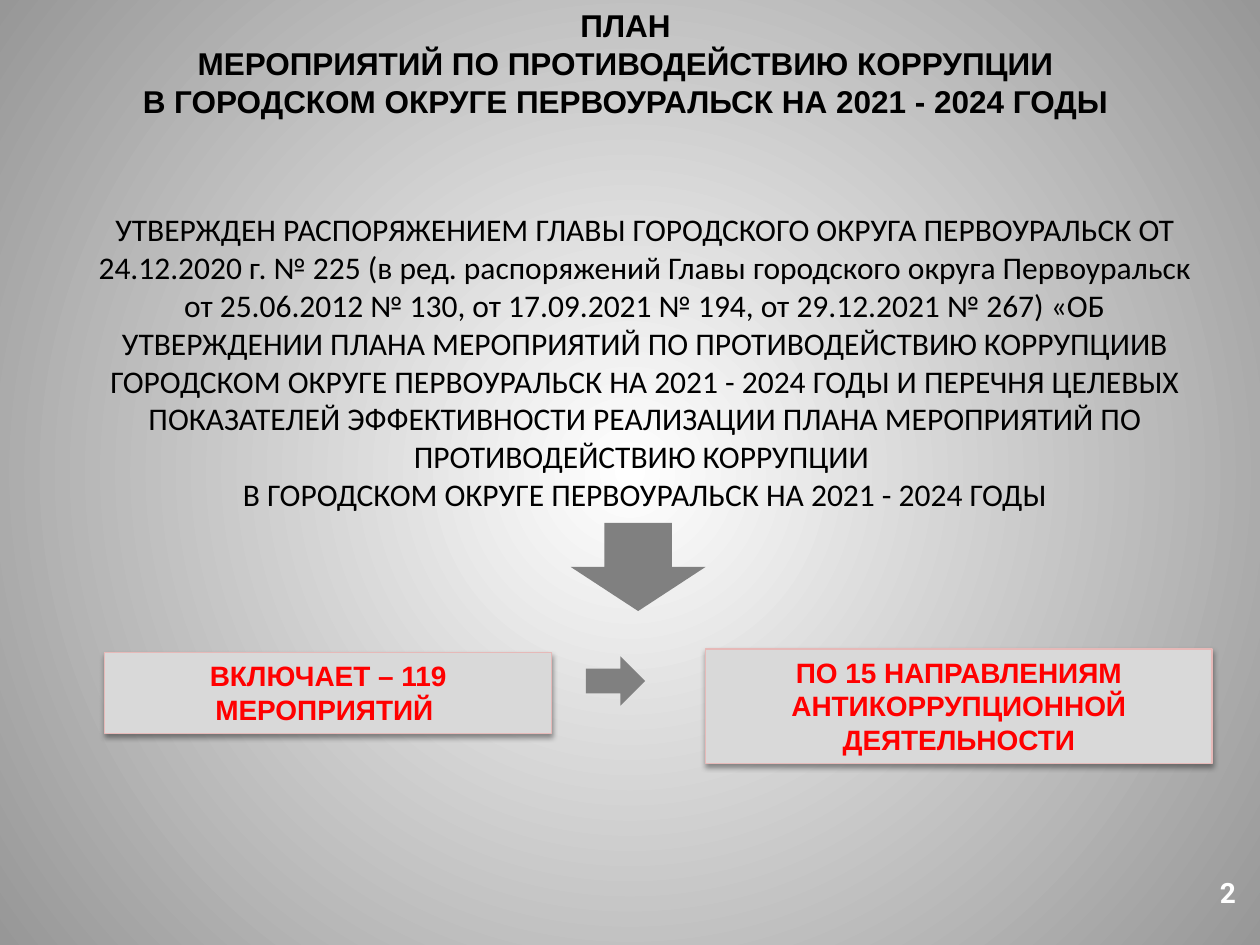
from lxml import etree
from pptx import Presentation
from pptx.dml.color import RGBColor
from pptx.enum.shapes import MSO_SHAPE
from pptx.enum.text import MSO_ANCHOR, MSO_AUTO_SIZE, PP_ALIGN
from pptx.oxml.ns import qn
from pptx.util import Inches, Pt

CENTER = PP_ALIGN.CENTER
TOP = MSO_ANCHOR.TOP
GROW = MSO_AUTO_SIZE.SHAPE_TO_FIT_TEXT
RECT = MSO_SHAPE.RECTANGLE
DOWN_ARROW = MSO_SHAPE.DOWN_ARROW
RIGHT_ARROW = MSO_SHAPE.RIGHT_ARROW

COLORS = {
    "glow": "FFFFFF",
    "edge": "979797",
    "text": "000000",
    "number": "FFFFFF",
    "accent": "FF0000",
    "arrow": "808080",
    "box": "D9D9D9",
    "border": "E6B9B8",
    "shadow": "000000",
}

TITLE = [
    "ПЛАН",
    "МЕРОПРИЯТИЙ ПО ПРОТИВОДЕЙСТВИЮ КОРРУПЦИИ",
    "В ГОРОДСКОМ ОКРУГЕ ПЕРВОУРАЛЬСК НА 2021 - 2024 ГОДЫ",
]
DECREE = [
    "УТВЕРЖДЕН РАСПОРЯЖЕНИЕМ ГЛАВЫ ГОРОДСКОГО ОКРУГА ПЕРВОУРАЛЬСК ОТ "
    "24.12.2020 г. № 225 (в ред. распоряжений Главы городского округа "
    "Первоуральск от 25.06.2012 № 130, от 17.09.2021 № 194, от 29.12.2021 "
    "№ 267) «ОБ УТВЕРЖДЕНИИ ПЛАНА МЕРОПРИЯТИЙ ПО ПРОТИВОДЕЙСТВИЮ КОРРУПЦИИВ "
    "ГОРОДСКОМ ОКРУГЕ ПЕРВОУРАЛЬСК НА 2021 - 2024 ГОДЫ И ПЕРЕЧНЯ ЦЕЛЕВЫХ "
    "ПОКАЗАТЕЛЕЙ ЭФФЕКТИВНОСТИ РЕАЛИЗАЦИИ ПЛАНА МЕРОПРИЯТИЙ ПО "
    "ПРОТИВОДЕЙСТВИЮ КОРРУПЦИИ ",
    "В ГОРОДСКОМ ОКРУГЕ ПЕРВОУРАЛЬСК НА 2021 - 2024 ГОДЫ",
]


def rgb(name):
    return RGBColor.from_string(COLORS[name])


def place(sp, box):
    sp.left, sp.top, sp.width, sp.height = map(Inches, box)


def write(sp, lines, size=18, font="Arial", color="text", bold=False):
    tf = sp.text_frame
    tf.word_wrap = True
    tf.auto_size = GROW
    tf.vertical_anchor = TOP
    for i, line in enumerate(lines):
        p = tf.paragraphs[0] if i == 0 else tf.add_paragraph()
        p.alignment = CENTER
        p.space_before = Pt(0)
        r = p.add_run()
        r.text = line
        r.font.size = Pt(size)
        r.font.name = font
        r.font.bold = bold
        r.font.color.rgb = rgb(color)


def add_background(s):
    fill = s.background.fill
    fill.gradient()
    for stop, name in zip(fill.gradient_stops, ("glow", "edge")):
        stop.color.rgb = rgb(name)
    # Radial gradient from the centre instead of a linear one
    grad = s.background._cSld.find(".//" + qn("a:gradFill"))
    grad.remove(grad.find(qn("a:lin")))
    radial = etree.SubElement(grad, qn("a:path"), path="circle")
    etree.SubElement(radial, qn("a:fillToRect"),
                     {side: "50000" for side in "ltrb"})


def add_title(s, box):
    sp = s.shapes.title
    place(sp, box)
    write(sp, TITLE, bold=True)


def add_decree(s, box):
    sp = s.placeholders[1]
    place(sp, box)
    write(sp, DECREE, font="Calibri")
    for p in sp.text_frame.paragraphs:
        pPr = p._p.get_or_add_pPr()
        pPr.set("marL", "0")
        pPr.set("indent", "0")
        etree.SubElement(pPr, qn("a:buNone"))


def add_filled(s, kind, box, color):
    sp = s.shapes.add_shape(kind, *map(Inches, box))
    sp.shadow.inherit = False
    sp.fill.solid()
    sp.fill.fore_color.rgb = rgb(color)
    sp.line.fill.background()
    return sp


def add_fact(s, box, text):
    sp = add_filled(s, RECT, box, "box")
    sp.line.color.rgb = rgb("border")
    sp.line.width = Pt(0.75)
    effects = sp._element.spPr.find(qn("a:effectLst"))
    shadow = etree.SubElement(
        effects, qn("a:outerShdw"), blurRad=str(Pt(3.1)), dist=str(Pt(1.6)),
        dir="5400000", rotWithShape="0")
    color = etree.SubElement(shadow, qn("a:srgbClr"), val=COLORS["shadow"])
    etree.SubElement(color, qn("a:alpha"), val="38000")
    write(sp, [text], size=16, color="accent", bold=True)


def add_page_number(s, box):
    sp = s.shapes.add_textbox(*map(Inches, box))
    write(sp, ["2"], size=16, font="Roboto", color="number", bold=True)


def main():
    prs = Presentation()
    prs.slide_width, prs.slide_height = Inches(10), Inches(7.5)
    s = prs.slides.add_slide(prs.slide_layouts[1])
    add_background(s)

    # Heading and decree
    add_page_number(s, (9.49, 6.9, 0.51, 0.37))
    add_title(s, (0.51, 0, 8.91, 1.01))
    add_decree(s, (0.66, 1.62, 8.92, 2.52))

    # What the plan includes
    add_filled(s, DOWN_ARROW, (4.53, 4.15, 1.07, 0.7), "arrow")
    add_fact(s, (0.83, 5.18, 3.55, 0.64), "ВКЛЮЧАЕТ – 119 МЕРОПРИЯТИЙ ")
    add_fact(s, (5.6, 5.15, 4.02, 0.91),
             "ПО 15 НАПРАВЛЕНИЯМ АНТИКОРРУПЦИОННОЙ ДЕЯТЕЛЬНОСТИ")
    add_filled(s, RIGHT_ARROW, (4.65, 5.21, 0.47, 0.39), "arrow")

    prs.save("out.pptx")


if __name__ == "__main__":
    main()
